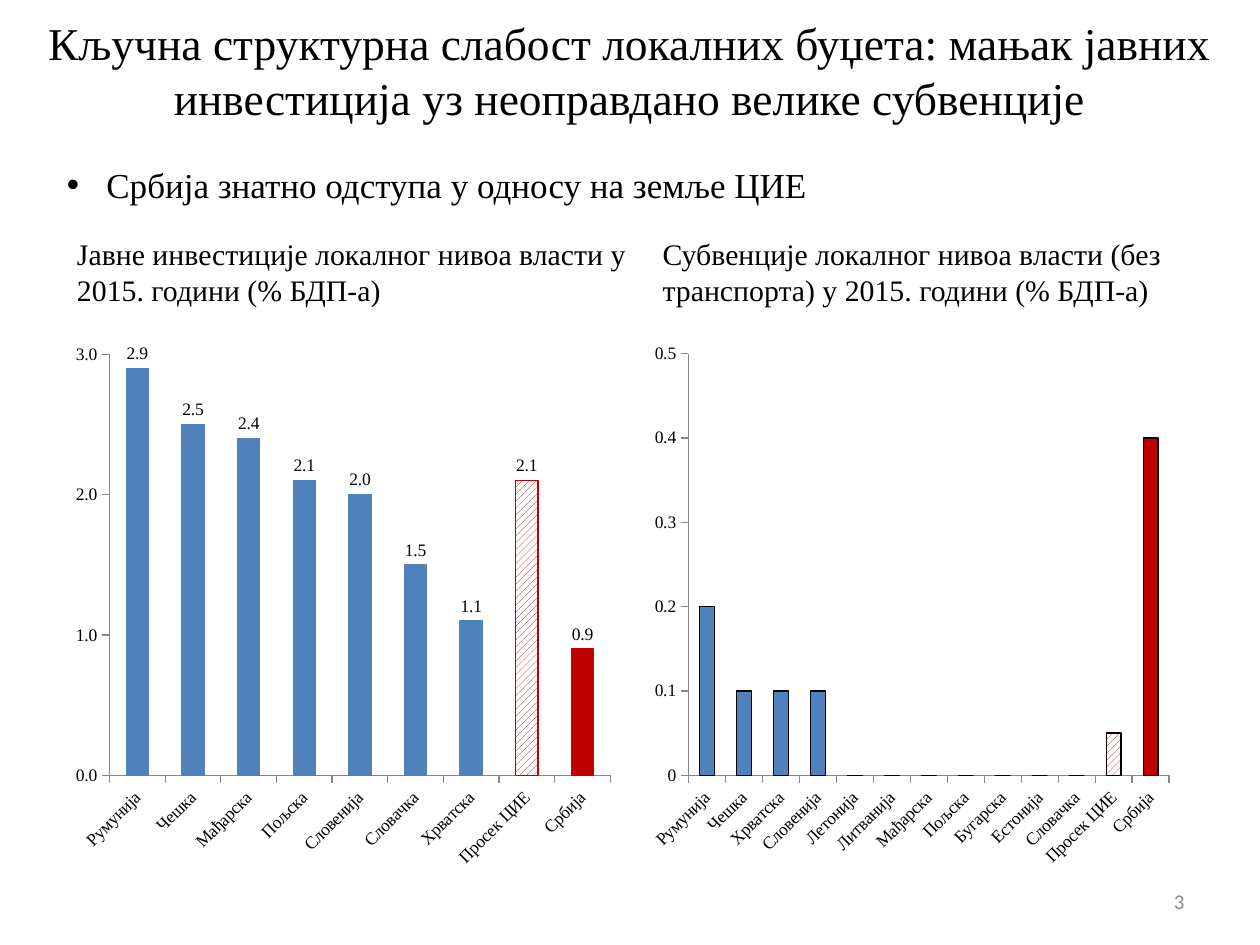
import pptx
import pptx.util
import pptx.chart.data
import pptx.dml.color
import pptx.enum.chart
import pptx.enum.dml
import pptx.enum.text
from lxml import etree

Pt = pptx.util.Pt
ALIGN = pptx.enum.text.PP_ALIGN
ANCHOR = pptx.enum.text.MSO_ANCHOR
CHART = pptx.enum.chart
SERIF = "Times New Roman"
BLUE, RED, BLACK, GREY = "4F81BD", "C00000", "000000", "868686"


def rgb(value):
    return pptx.dml.color.RGBColor.from_string(value)


class Deck:
    text_format = {"name": SERIF, "size": Pt(20), "bold": False}
    axis_format = {"has_major_gridlines": False,
                   "major_tick_mark": CHART.XL_TICK_MARK.OUTSIDE,
                   "minor_tick_mark": CHART.XL_TICK_MARK.NONE}

    def __init__(self, width, height):
        self.prs = pptx.Presentation()
        self.prs.slide_width, self.prs.slide_height = Pt(width), Pt(height)
        self.s = self.prs.slides.add_slide(self.prs.slide_layouts[6])

    def style_font(self, font, color=BLACK, **changes):
        for name, value in {**self.text_format, **changes}.items():
            setattr(font, name, value)
        font.color.rgb = rgb(color)

    def text(self, box, words, size, align=ALIGN.LEFT, anchor=ANCHOR.MIDDLE,
             color=BLACK, font=SERIF, bullet_indent=0):
        tf = self.s.shapes.add_textbox(*map(Pt, box)).text_frame
        tf.word_wrap, tf.vertical_anchor = True, anchor
        p = tf.paragraphs[0]
        p.alignment = align
        r = p.add_run()
        r.text = words
        self.style_font(r.font, color, name=font, size=Pt(size))
        if bullet_indent:
            pPr = p._p.get_or_add_pPr()
            pPr.set("marL", str(Pt(bullet_indent)))
            pPr.set("indent", str(-Pt(bullet_indent)))
            ns = pptx.oxml.ns.qn
            etree.SubElement(pPr, ns("a:buFont")).set("typeface", "Arial")
            etree.SubElement(pPr, ns("a:buChar")).set("char", "•")

    def axis(self, axis, **changes):
        for name, value in {**self.axis_format, **changes}.items():
            setattr(axis, name, value)
        axis.format.line.color.rgb = rgb(GREY)
        axis.format.line.width = Pt(0.75)
        self.style_font(axis.tick_labels.font, size=Pt(10))

    def paint(self, fmt, fill, line, hatched=False):
        if hatched:
            fmt.fill.patterned()
            fmt.fill.pattern = pptx.enum.dml.MSO_PATTERN.WIDE_UPWARD_DIAGONAL
            fmt.fill.fore_color.rgb = rgb(fill)
            fmt.fill.back_color.rgb = rgb("FFFFFF")
        else:
            fmt.fill.solid()
            fmt.fill.fore_color.rgb = rgb(fill)
        fmt.line.color.rgb = rgb(line)
        fmt.line.width = Pt(0.75)

    def columns(self, box, values, top, step, number_format, plot_box,
                outline=None, labels=False):
        """Column chart whose last two bars are the average and Serbia."""
        data = pptx.chart.data.CategoryChartData()
        data.categories = list(values)
        data.add_series("Series 1", list(values.values()))
        chart = self.s.shapes.add_chart(
            CHART.XL_CHART_TYPE.COLUMN_CLUSTERED, *map(Pt, box), data).chart
        chart.has_title = chart.has_legend = False
        self.style_font(chart.font, size=Pt(10))

        # Axes
        self.axis(chart.category_axis)
        chart.category_axis._element.txPr.bodyPr.set("rot", "-2700000")
        self.axis(chart.value_axis, minimum_scale=0, maximum_scale=top,
                  major_unit=step)
        tick_labels = chart.value_axis.tick_labels
        tick_labels.number_format = number_format
        tick_labels.number_format_is_linked = False

        # Bars
        plot = chart.plots[0]
        plot.gap_width, plot.vary_by_categories = 150, False
        series = plot.series[0]
        self.paint(series.format, BLUE, outline or BLUE)
        last = len(values) - 1
        for index, hatched in ((last - 1, True), (last, False)):
            self.paint(series.points[index].format, RED, outline or RED, hatched)
        if labels:
            dl = series.data_labels
            for name, value in {"show_value": True,
                                "number_format": number_format,
                                "number_format_is_linked": False,
                                "position": CHART.XL_LABEL_POSITION.OUTSIDE_END
                                }.items():
                setattr(dl, name, value)
            self.style_font(dl.font, size=Pt(10))

        # Inner plot area, turned from slide points into chart fractions
        left, top_edge, width, height = box
        x, y, w, h = plot_box
        fractions = {"x": (x - left) / width, "y": (y - top_edge) / height,
                     "w": w / width, "h": h / height}
        ns = pptx.oxml.ns.qn
        area = chart._chartSpace.chart.plotArea
        for old in area.findall(ns("c:layout")):
            area.remove(old)
        layout = etree.Element(ns("c:layout"))
        area.insert(0, layout)
        manual = etree.SubElement(layout, ns("c:manualLayout"))
        settings = {"layoutTarget": "inner", "xMode": "edge", "yMode": "edge",
                    **fractions}
        for tag, value in settings.items():
            etree.SubElement(manual, ns("c:" + tag)).set("val", str(value))


def main():
    deck = Deck(720, 540)

    # Title and main point
    deck.text((8.6, 9.4, 702.7, 61.2),
              "Кључна структурна слабост локалних буџета: мањак јавних "
              "инвестиција уз неоправдано велике субвенције",
              26, ALIGN.CENTER)
    deck.text((31.2, 88.6, 648, 33.8),
              "Србија знатно одступа у односу на земље ЦИЕ", 20,
              bullet_indent=22.5)

    # Chart headings
    for left, width, words in (
            (36.9, 329.8, "Јавне инвестиције локалног нивоа власти у "
                          "2015. години (% БДП-а)"),
            (371.5, 318.2, "Субвенције локалног нивоа власти (без "
                           "транспорта) у 2015. години (% БДП-а)")):
        deck.text((left, 133.9, width, 45.4), words, 17, anchor=ANCHOR.BOTTOM)

    # Public investment
    investment = {"Румунија": 2.9, "Чешка": 2.5, "Мађарска": 2.4,
                  "Пољска": 2.1, "Словенија": 2.0, "Словачка": 1.5,
                  "Хрватска": 1.1, "Просек ЦИЕ": 2.1, "Србија": 0.9}
    deck.columns((36.7, 190.8, 318.2, 311), investment, 3, 1, "#,##0.0",
                 (62.6, 202.6, 286.2, 240.6), labels=True)

    # Subsidies
    none = ("Летонија", "Литванија", "Мађарска", "Пољска", "Бугарска",
            "Естонија", "Словачка")
    subsidies = {"Румунија": 0.2, "Чешка": 0.1, "Хрватска": 0.1,
                 "Словенија": 0.1, **dict.fromkeys(none, 0),
                 "Просек ЦИЕ": 0.05, "Србија": 0.4}
    deck.columns((365.8, 185, 313.2, 311.8), subsidies, 0.5, 0.1, "General",
                 (393.4, 202.1, 274.7, 241), outline=BLACK)

    # Slide number
    deck.text((516.2, 500.4, 167.8, 28.8), "3", 12, ALIGN.RIGHT,
              color="8C8C8C", font="Calibri")

    deck.prs.save("out.pptx")


if __name__ == "__main__":
    main()
